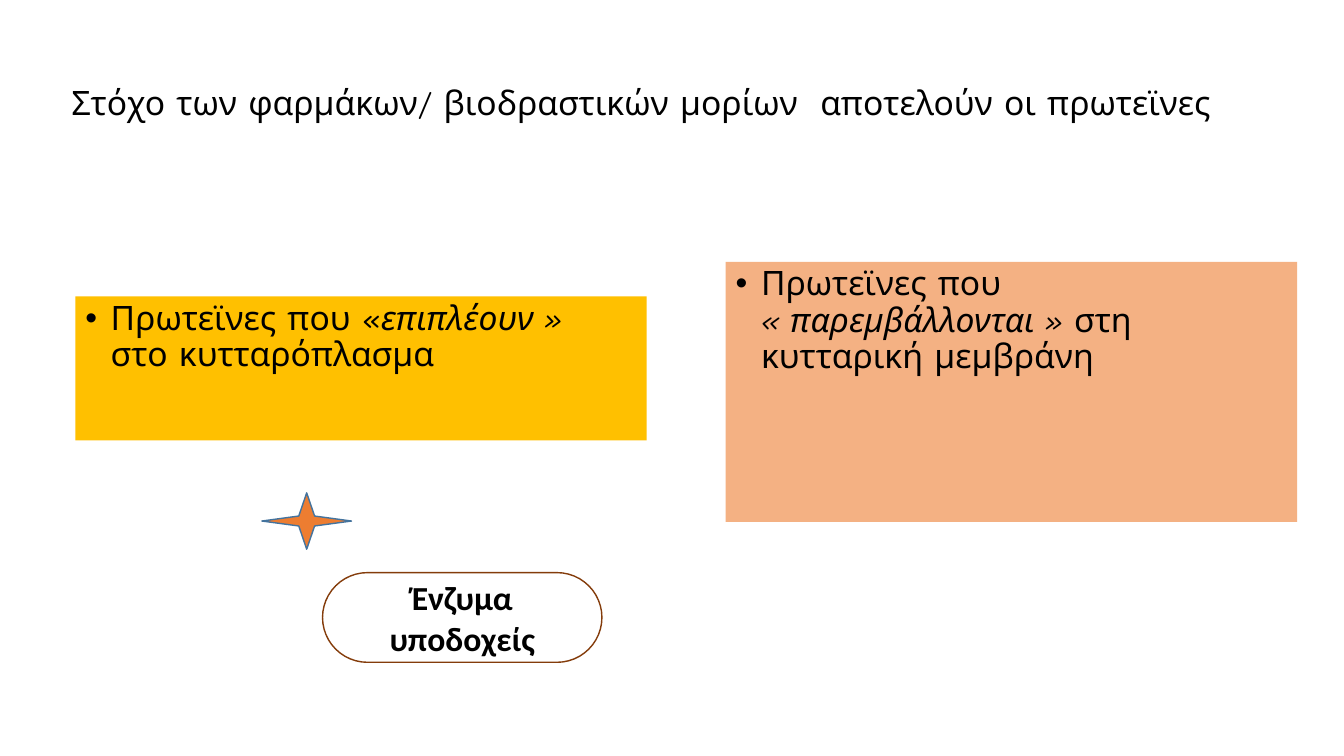
from lxml import etree
from pptx import Presentation
from pptx.dml import color
from pptx.enum import shapes, text
from pptx.oxml import ns
from pptx.util import Cm, Pt

COLORS = {
    "text": "000000",
    "cytoplasm": "FFC000",
    "membrane": "F4B183",
    "star": "ED7D31",
    "star_line": "43739E",
    "enzyme_line": "843C0B",
}
BODY_FONT = "Comic Neue"
LABEL_FONT = "Calibri"


def rgb(name):
    return color.RGBColor.from_string(COLORS[name])


def add_run(p, content, font=BODY_FONT, bold=False, italic=False):
    r = p.add_run()
    r.text = content
    r.font.name = font
    r.font.size = Pt(24)
    r.font.bold = bold
    r.font.italic = italic
    r.font.color.rgb = rgb("text")


def add_shape(s, kind, box, fill=None, line=None):
    sp = s.shapes.add_shape(kind, *map(Cm, box))
    sp.shadow.inherit = False
    if fill:
        sp.fill.solid()
        sp.fill.fore_color.rgb = rgb(fill)
    else:
        sp.fill.background()
    if line:
        sp.line.color.rgb = rgb(line)
        sp.line.width = Pt(1)
    else:
        sp.line.fill.background()
    return sp


def add_bullet(p):
    pPr = p._p.get_or_add_pPr()
    pPr.set("marL", str(Cm(0.64)))
    pPr.set("indent", str(-Cm(0.64)))
    etree.SubElement(pPr, ns.qn("a:buFont")).set("typeface", "Arial")
    etree.SubElement(pPr, ns.qn("a:buChar")).set("char", "•")


def add_title(s, box, content):
    tf = s.shapes.add_textbox(*map(Cm, box)).text_frame
    tf.word_wrap = True
    p = tf.paragraphs[0]
    p.alignment = text.PP_ALIGN.CENTER
    add_run(p, content)


def add_panel(s, box, fill, lines):
    sp = add_shape(s, shapes.MSO_SHAPE.RECTANGLE, box, fill)
    tf = sp.text_frame
    tf.word_wrap = True
    tf.vertical_anchor = text.MSO_ANCHOR.TOP
    p = tf.paragraphs[0]
    p.alignment = text.PP_ALIGN.LEFT
    p.line_spacing = 0.9
    p.space_before = Pt(10)
    add_bullet(p)
    for i, line in enumerate(lines):
        if i:
            p.add_line_break()
        for content, italic in line:
            add_run(p, content, italic=italic)


def add_label(s, box, line, words):
    sp = add_shape(s, shapes.MSO_SHAPE.FLOWCHART_TERMINATOR, box, line=line)
    tf = sp.text_frame
    tf.word_wrap = True
    tf.vertical_anchor = text.MSO_ANCHOR.MIDDLE
    for i, word in enumerate(words):
        p = tf.add_paragraph() if i else tf.paragraphs[0]
        p.alignment = text.PP_ALIGN.CENTER
        add_run(p, word, LABEL_FONT, bold=True)


def main():
    prs = Presentation()
    prs.slide_width, prs.slide_height = Cm(33.87), Cm(19.05)
    s = prs.slides.add_slide(prs.slide_layouts[6])

    add_title(s, (1.02, 1.93, 30.56, 2.31),
              "Στόχο των φαρμάκων/ βιοδραστικών μορίων  αποτελούν οι πρωτεϊνες ")
    add_panel(s, (1.9, 7.47, 14.4, 3.63), "cytoplasm", [
        [("Πρωτεϊνες που «", False), ("επιπλέουν » ", True)],
        [("στο κυτταρόπλασμα", False)],
    ])
    add_panel(s, (18.29, 6.6, 14.4, 6.55), "membrane", [
        [("Πρωτεϊνες που", False)],
        [("« παρεμβάλλονται »", True), (" στη κυτταρική μεμβράνη", False)],
    ])
    add_shape(s, shapes.MSO_SHAPE.STAR_4_POINT, (6.6, 12.42, 2.26, 1.42),
              "star", "star_line")
    add_label(s, (8.13, 14.43, 7.04, 2.26), "enzyme_line",
              ["Ένζυμα", "υποδοχείς"])

    prs.save("out.pptx")


if __name__ == "__main__":
    main()
